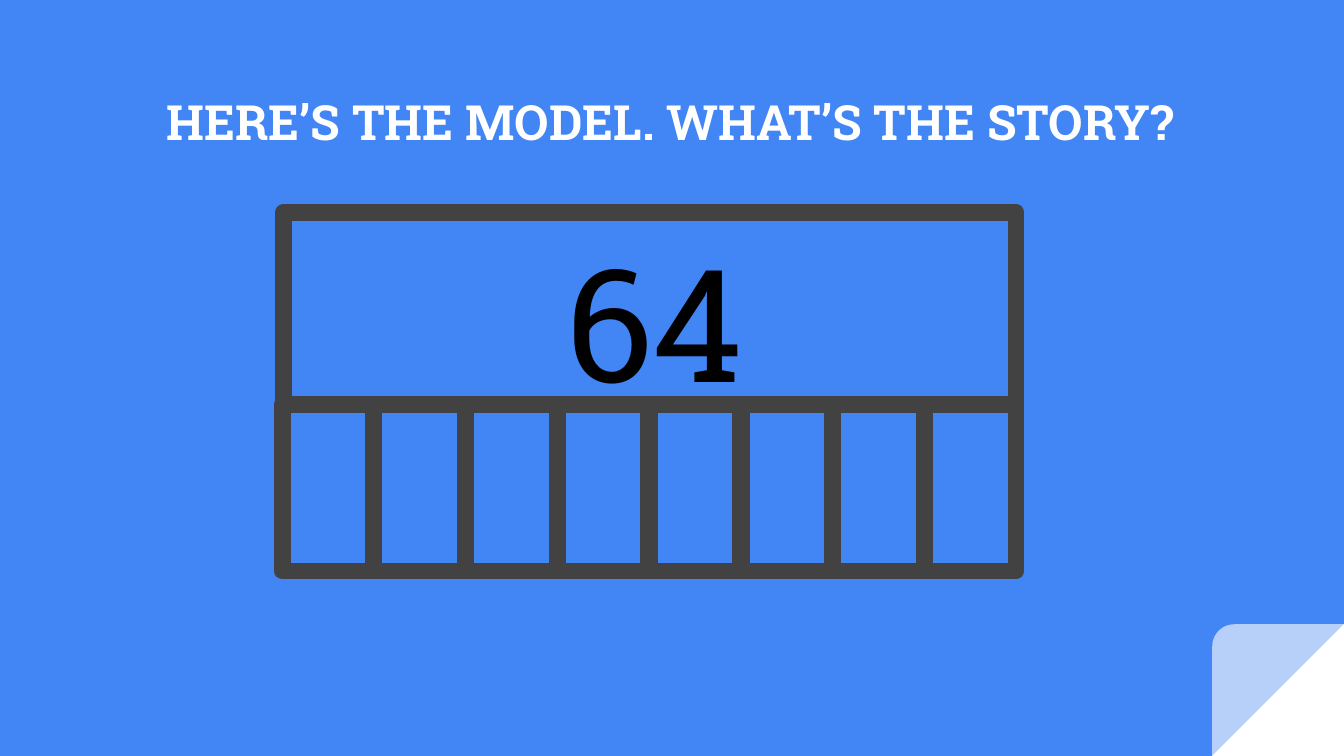
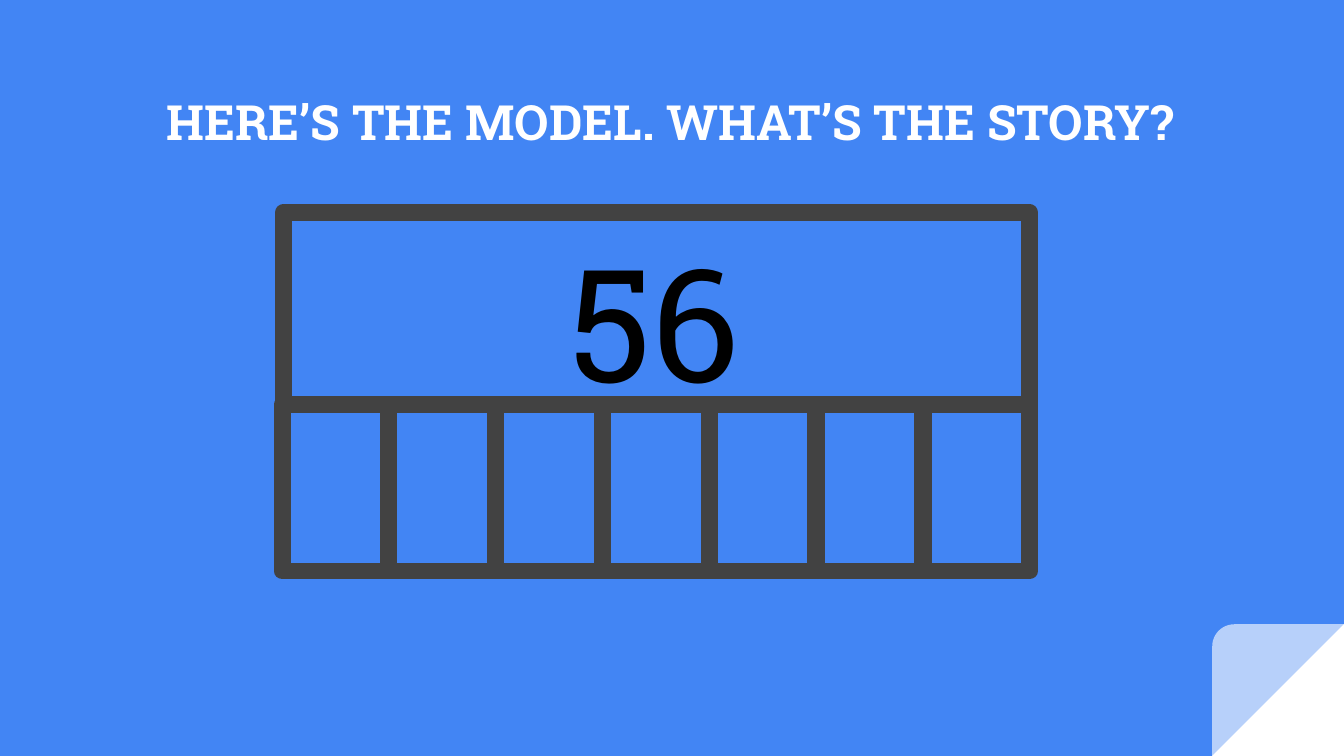
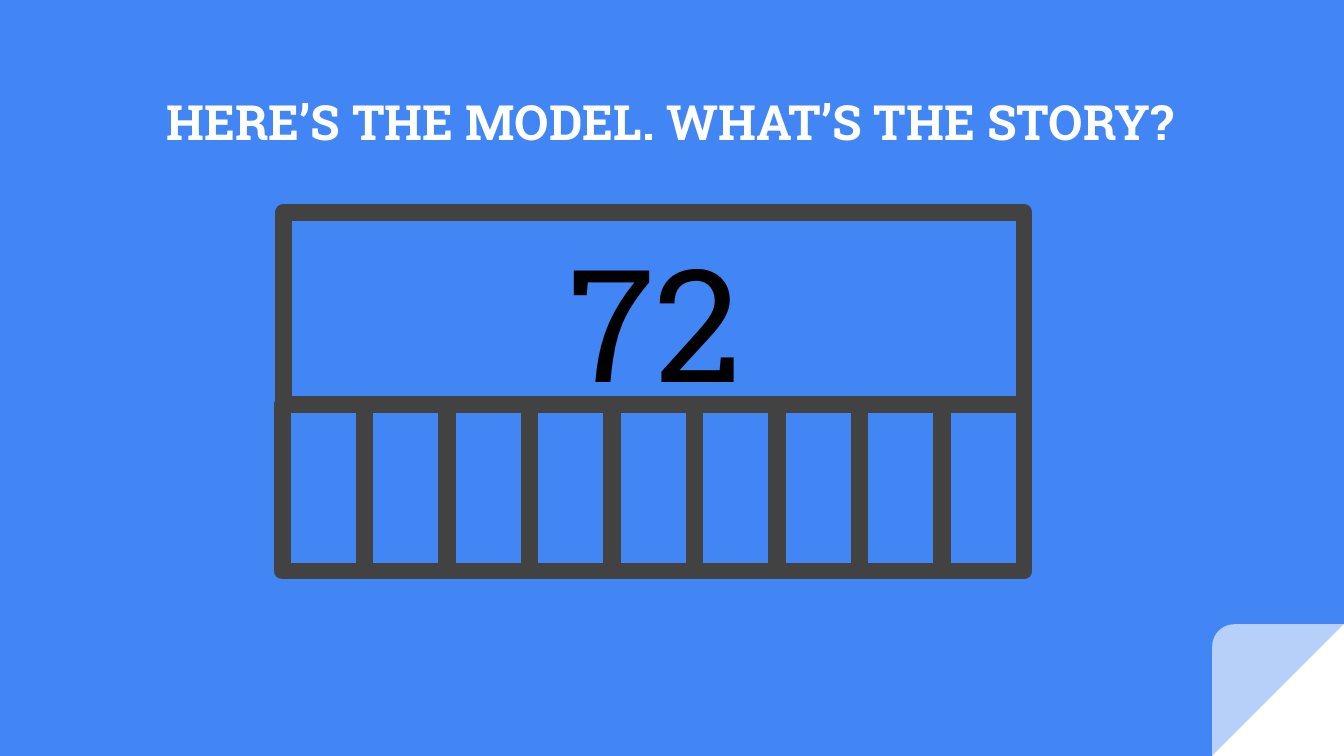
from pptx import Presentation
from pptx.dml.color import RGBColor
from pptx.enum.shapes import MSO_SHAPE as Shape
from pptx.enum.text import MSO_ANCHOR as Anchor, MSO_AUTO_SIZE as AutoSize, PP_ALIGN as Align
from pptx.oxml.ns import qn
from pptx.util import Inches, Pt
from lxml import etree

BLUE = RGBColor(0x42, 0x85, 0xF4)
WHITE = RGBColor(0xFF, 0xFF, 0xFF)
BLACK = RGBColor(0x00, 0x00, 0x00)
GRAY = RGBColor(0x42, 0x42, 0x42)
FONT = "Roboto Slab"
TITLE = "HERE’S THE MODEL. WHAT’S THE STORY?"

# Bar model geometry, in inches
WHOLE_LEFT, WHOLE_TOP, WHOLE_HEIGHT = 2.11, 1.58, 1.43
PARTS_LEFT, PARTS_TOP, PARTS_HEIGHT = 2.1, 3.01, 1.24
CORNER_SIZE = 0.98

# Whole number, width of its bar, number of parts, width of each part
MODELS = [
    ("64", 5.45, 8, 0.68),
    ("56", 5.55, 7, 0.79),
    ("72", 5.51, 9, 0.61),
]


def add_plain_shape(slide, kind, left, top, width, height, fill=None, line=None):
    shape = slide.shapes.add_shape(
        kind, Inches(left), Inches(top), Inches(width), Inches(height))
    shape.shadow.inherit = False
    if fill is None:
        shape.fill.background()
    else:
        shape.fill.solid()
        shape.fill.fore_color.rgb = fill
    if line is None:
        shape.line.fill.background()
    else:
        shape.line.color.rgb = line
        shape.line.width = Pt(9)
    return shape


def add_centered_text(slide, text, left, top, width, height, size, color, bold=False):
    box = slide.shapes.add_textbox(
        Inches(left), Inches(top), Inches(width), Inches(height))
    frame = box.text_frame
    frame.word_wrap = True
    frame.margin_left = frame.margin_right = Inches(0.1)
    frame.margin_top = frame.margin_bottom = Inches(0.1)
    frame.text = text
    paragraph = frame.paragraphs[0]
    paragraph.alignment = Align.CENTER
    font = paragraph.runs[0].font
    font.name, font.size, font.bold = FONT, Pt(size), bold
    font.color.rgb = color
    return frame


# Widescreen slides, 16:9
presentation = Presentation()
presentation.slide_width = Inches(10)
presentation.slide_height = presentation.slide_width * 9 // 16
corner_left = presentation.slide_width.inches - CORNER_SIZE
corner_top = Inches(10).inches * 9 / 16 - CORNER_SIZE

# Shared background
background = presentation.slide_master.background.fill
background.solid()
background.fore_color.rgb = BLUE

for whole, whole_width, part_count, part_width in MODELS:
    slide = presentation.slides.add_slide(presentation.slide_layouts[6])

    # Folded page corner
    for kind in (Shape.RIGHT_TRIANGLE, Shape.ROUND_1_RECTANGLE):
        corner = add_plain_shape(slide, kind, corner_left, corner_top,
                                 CORNER_SIZE, CORNER_SIZE, fill=WHITE)
        corner._element.spPr.find(qn("a:xfrm")).set("flipH", "1")
    color = corner._element.spPr.find(qn("a:solidFill"))[0]
    etree.SubElement(color, qn("a:alpha")).set("val", "62000")

    # Title
    title = add_centered_text(slide, TITLE, 0.04, 0.3, 9.9, 0.92, 26, WHITE, bold=True)
    title.vertical_anchor = Anchor.BOTTOM

    # Whole bar with its number
    add_plain_shape(slide, Shape.RECTANGLE, WHOLE_LEFT, WHOLE_TOP,
                    whole_width, WHOLE_HEIGHT, line=GRAY)
    number = add_centered_text(slide, whole, 2.17, WHOLE_TOP, 5.4, 1.62, 84, BLACK)
    number.auto_size = AutoSize.SHAPE_TO_FIT_TEXT

    # Equal parts, the last one ending flush with the whole bar
    last_left = WHOLE_LEFT + whole_width - part_width
    step = (last_left - PARTS_LEFT) / (part_count - 1)
    for index in range(part_count):
        add_plain_shape(slide, Shape.RECTANGLE, PARTS_LEFT + index * step, PARTS_TOP,
                        part_width, PARTS_HEIGHT, line=GRAY)

presentation.save("out.pptx")
